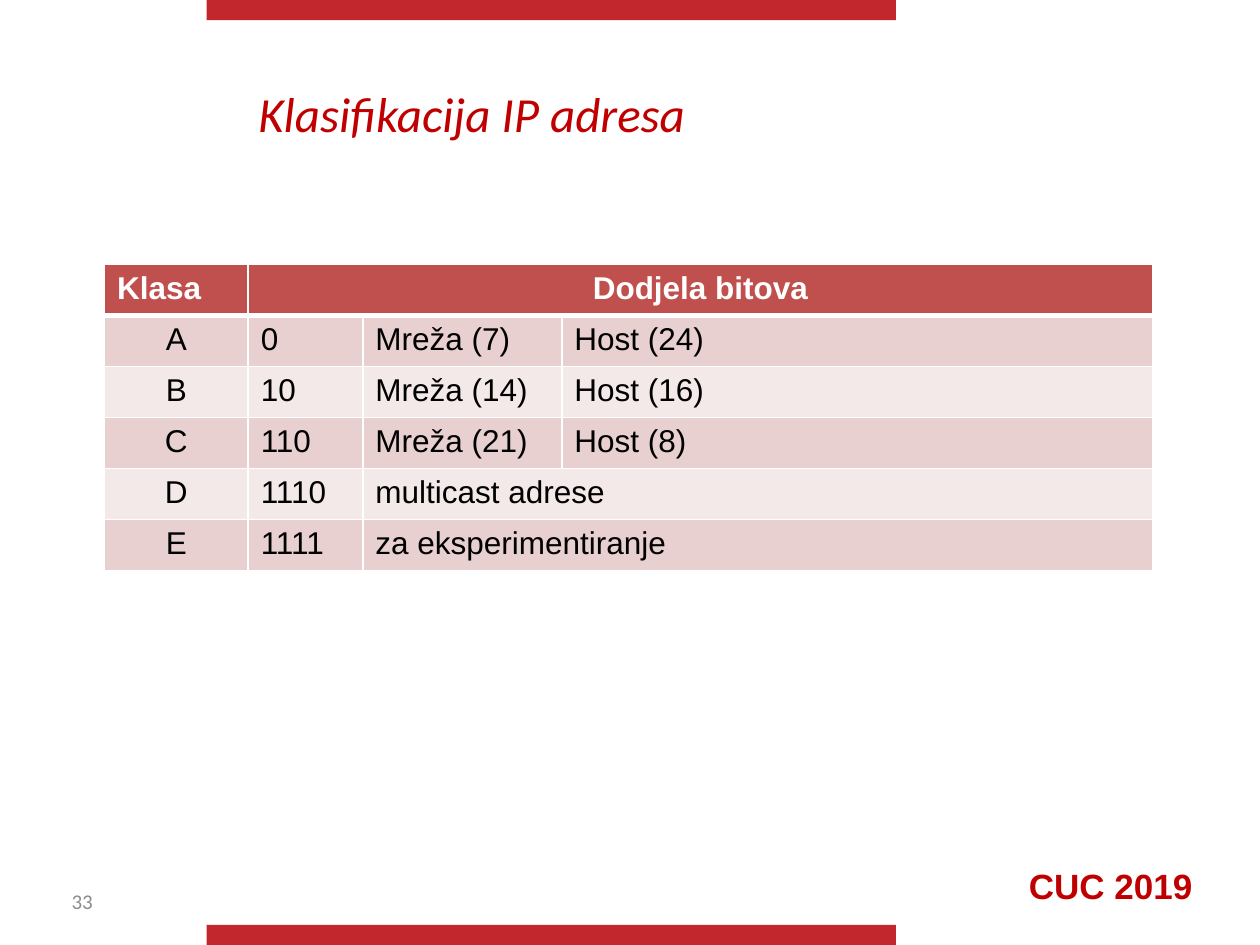
from dataclasses import dataclass
from typing import Optional

from lxml.etree import SubElement
from pptx import Presentation
from pptx.dml.color import RGBColor as RGB
from pptx.enum.shapes import MSO_SHAPE as Shape
from pptx.enum.text import MSO_ANCHOR as Anchor, PP_ALIGN as Align
from pptx.oxml.ns import qn
from pptx.util import Inches, Pt


@dataclass(frozen=True)
class Theme:
    bar: str = "C1272D"
    accent: str = "C00000"
    header: str = "C0504D"
    bands: tuple = ("E8D0D0", "F4E9E9")
    white: str = "FFFFFF"
    black: str = "000000"
    muted: str = "8C8C8C"
    heading_font: str = "Calibri"
    body_font: str = "Arial"
    title_size: int = 28
    event_size: int = 20
    table_size: int = 18
    number_size: int = 12


@dataclass(frozen=True)
class Box:
    left: float
    top: float
    width: float
    height: float

    def emu(self) -> tuple:
        return tuple(map(Inches, (self.left, self.top, self.width, self.height)))


@dataclass(frozen=True)
class AddressClass:
    name: str
    prefix: str
    use: str
    host: Optional[str] = None


THEME = Theme()
COLUMNS = (1.14, 0.91, 1.58, 4.69)
ROW_HEIGHT = 0.405
CLASSES = (
    AddressClass("A", "0", "Mreža (7)", "Host (24)"),
    AddressClass("B", "10", "Mreža (14)", "Host (16)"),
    AddressClass("C", "110", "Mreža (21)", "Host (8)"),
    AddressClass("D", "1110", "multicast adrese"),
    AddressClass("E", "1111", "za eksperimentiranje"),
)


def write(tf, text: str, font: str, size: int, color: str, bold: bool = False,
          italic: bool = False, align: Align = Align.LEFT) -> None:
    tf.text = text
    p = tf.paragraphs[0]
    p.alignment = align
    for r in p.runs:
        f = r.font
        f.name, f.size, f.bold, f.italic = font, Pt(size), bold, italic
        f.color.rgb = RGB.from_string(color)


def add_bar(slide, box: Box) -> None:
    sp = slide.shapes.add_shape(Shape.RECTANGLE, *box.emu())
    sp.shadow.inherit = False
    sp.fill.solid()
    sp.fill.fore_color.rgb = RGB.from_string(THEME.bar)
    sp.line.fill.background()


def add_text(slide, box: Box, text: str, anchor: Anchor = Anchor.TOP, **style) -> None:
    tf = slide.shapes.add_textbox(*box.emu()).text_frame
    tf.word_wrap = True
    tf.vertical_anchor = anchor
    write(tf, text, **style)


def set_borders(cell, top: float = 1, bottom: float = 1) -> None:
    tc_pr = cell._tc.get_or_add_tcPr()
    for side, width in (("L", 1), ("R", 1), ("T", top), ("B", bottom)):
        ln = SubElement(tc_pr, qn(f"a:ln{side}"), w=str(Pt(width)))
        fill = SubElement(ln, qn("a:solidFill"))
        SubElement(fill, qn("a:srgbClr"), val=THEME.white)


def add_class_table(slide, left: float, top: float) -> None:
    rows = [("Klasa", "Dodjela bitova", None, None)]
    rows += [(c.name, c.prefix, c.use, c.host) for c in CLASSES]
    box = Box(left, top, sum(COLUMNS), ROW_HEIGHT * len(rows))
    table = slide.shapes.add_table(len(rows), len(COLUMNS), *box.emu()).table
    for column, width in zip(table.columns, COLUMNS):
        column.width = Inches(width)
    for i, values in enumerate(rows):
        is_header = i == 0
        fill = THEME.header if is_header else THEME.bands[(i - 1) % 2]
        for j, value in enumerate(values):
            cell = table.cell(i, j)
            set_borders(cell, top=3 if i == 1 else 1, bottom=3 if is_header else 1)
            cell.fill.solid()
            cell.fill.fore_color.rgb = RGB.from_string(fill)
            if value is None:
                continue
            centered = j == (1 if is_header else 0)
            write(cell.text_frame, value, THEME.body_font, THEME.table_size,
                  THEME.white if is_header else THEME.black, bold=is_header,
                  align=Align.CENTER if centered else Align.LEFT)
        if None in values:
            table.cell(i, values.index(None) - 1).merge(table.cell(i, len(values) - 1))


def main() -> None:
    prs = Presentation()
    prs.slide_width, prs.slide_height = Inches(10), Inches(7.5)
    s = prs.slides.add_slide(prs.slide_layouts[5])

    for top in (0, 7.34):
        add_bar(s, Box(1.64, top, 5.47, 0.16))
    add_text(s, Box(7.91, 6.81, 1.81, 0.44), "CUC 2019", font=THEME.body_font,
             size=THEME.event_size, color=THEME.accent, bold=True, align=Align.CENTER)

    title = s.shapes.title
    title.left, title.top, title.width, title.height = Box(1.95, 0.55, 7.58, 0.7).emu()
    title.text_frame.vertical_anchor = Anchor.MIDDLE
    write(title.text_frame, "Klasifikacija IP adresa", THEME.heading_font,
          THEME.title_size, THEME.accent, italic=True)

    add_text(s, Box(0.47, 6.95, 2.33, 0.4), "33", Anchor.MIDDLE,
             font=THEME.heading_font, size=THEME.number_size, color=THEME.muted)
    add_class_table(s, 0.83, 2.1)
    prs.save("out.pptx")


if __name__ == "__main__":
    main()
